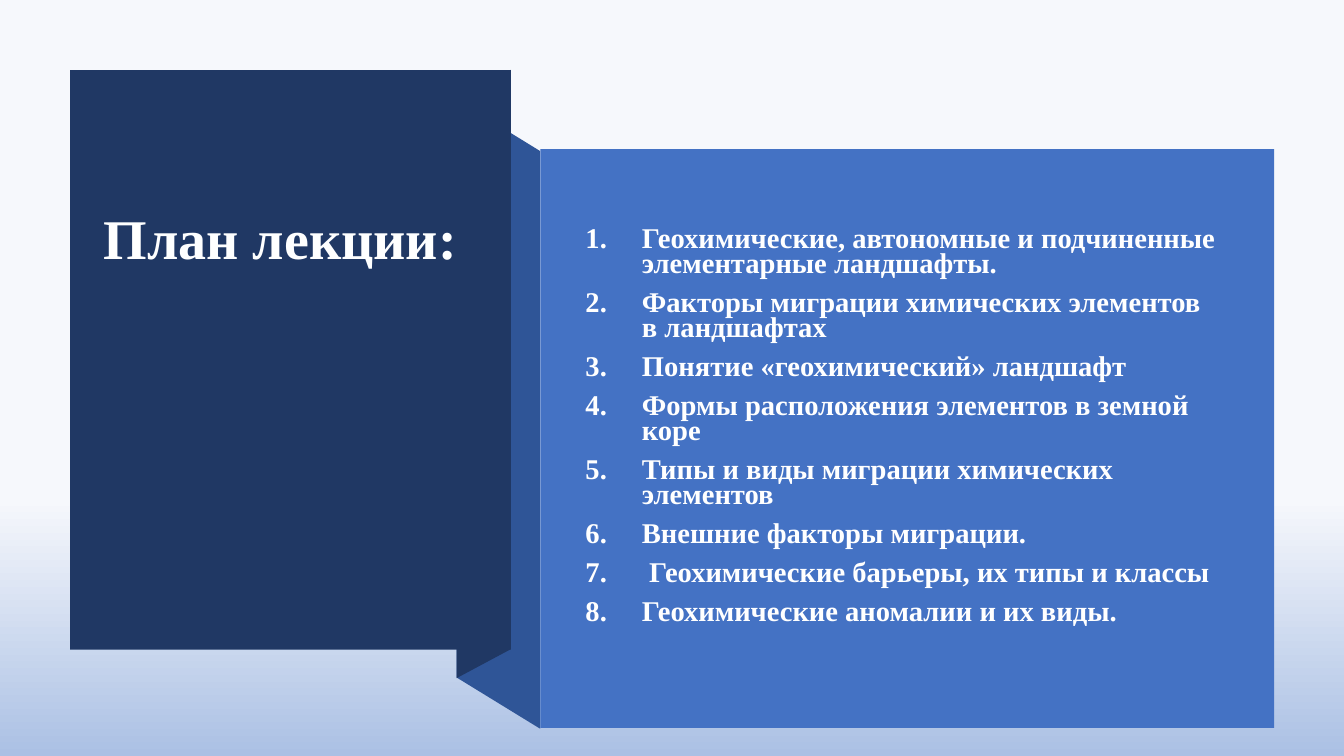
from pptx import Presentation
from pptx.dml.color import RGBColor
from pptx.enum.shapes import MSO_SHAPE
from pptx.enum.text import MSO_ANCHOR, MSO_AUTO_SIZE, PP_ALIGN
from pptx.oxml.xmlchemy import OxmlElement
from pptx.util import Pt

RECTANGLE = MSO_SHAPE.RECTANGLE
TOP = MSO_ANCHOR.TOP
NO_AUTOFIT = MSO_AUTO_SIZE.NONE
LEFT = PP_ALIGN.LEFT

TITLE_ONLY = 5
FONT = "Times New Roman"
COLORS = {
    "sky": "F6F8FC",
    "horizon": "ABC0E4",
    "cover": "203864",
    "fold": "2F5597",
    "panel": "4472C4",
    "title": "FEFFFF",
    "text": "FFFFFF",
}
PLAN = [
    "Геохимические, автономные и подчиненные элементарные ландшафты.",
    "Факторы миграции химических элементов в ландшафтах",
    "Понятие «геохимический» ландшафт",
    "Формы расположения элементов в земной коре",
    "Типы и виды миграции химических элементов",
    "Внешние факторы миграции.",
    " Геохимические барьеры, их типы и классы",
    "Геохимические аномалии и их виды.",
]
FOLD_LEFT, COVER_RIGHT, PANEL_LEFT = 326.2, 364.6, 385.9


def color(name):
    return RGBColor.from_string(COLORS[name])


def paint_background(slide):
    fill = slide.background.fill
    fill.gradient()
    fill.gradient_angle = 270
    for stop, name, position in zip(fill.gradient_stops, ("sky", "horizon"), (0.66, 1)):
        stop.color.rgb = color(name)
        stop.position = position


def paint(shape, name):
    shape.fill.solid()
    shape.fill.fore_color.rgb = color(name)
    shape.line.fill.background()
    shape.shadow.inherit = False


def add_block(slide, left, top, width, height, name):
    block = slide.shapes.add_shape(RECTANGLE, Pt(left), Pt(top), Pt(width), Pt(height))
    paint(block, name)


def add_ribbon(slide, corners, name):
    start, *rest = [(Pt(x), Pt(y)) for x, y in corners]
    outline = slide.shapes.build_freeform(*start)
    outline.add_line_segments(rest, close=True)
    paint(outline.convert_to_shape(), name)


def number_paragraph(paragraph, indent):
    properties = paragraph._p.get_or_add_pPr()
    properties.set("marL", str(Pt(indent)))
    properties.set("indent", str(-Pt(indent)))
    numbering = OxmlElement("a:buAutoNum")
    numbering.set("type", "arabicPeriod")
    properties.append(numbering)


def write_text(shape, lines, size, name, spacing=1.0, gap=0, indent=None):
    frame = shape.text_frame
    frame.word_wrap = True
    frame.auto_size = NO_AUTOFIT
    frame.vertical_anchor = TOP
    frame.text = "\n".join(lines)
    for paragraph in frame.paragraphs:
        paragraph.alignment = LEFT
        paragraph.line_spacing = spacing
        paragraph.space_before = Pt(0)
        paragraph.space_after = Pt(gap)
        if indent:
            number_paragraph(paragraph, indent)
        font = paragraph.runs[0].font
        font.name = FONT
        font.size = Pt(size)
        font.bold = True
        font.color.rgb = color(name)


def add_title(slide, text):
    title = slide.shapes.title
    title.left, title.top, title.width, title.height = Pt(67), Pt(141.8), Pt(308.9), Pt(55.4)
    write_text(title, [text], size=40, name="title")
    slide.shapes._spTree.append(title._element)


def add_plan(slide, items):
    plan = slide.shapes.add_textbox(Pt(411.1), Pt(159.5), Pt(468.7), Pt(288.3))
    write_text(plan, items, size=20.4, name="text", spacing=0.73, gap=10, indent=40.3)


def main():
    deck = Presentation()
    deck.slide_width, deck.slide_height = Pt(960), Pt(540)
    slide = deck.slides.add_slide(deck.slide_layouts[TITLE_ONLY])
    paint_background(slide)
    add_ribbon(
        slide,
        [(PANEL_LEFT, 520.6), (FOLD_LEFT, 484), (FOLD_LEFT, 71.3), (PANEL_LEFT, 108)],
        "fold",
    )
    add_ribbon(
        slide,
        [(COVER_RIGHT, 463.9), (FOLD_LEFT, 484.4), (FOLD_LEFT, 70.6), (COVER_RIGHT, 49.9)],
        "cover",
    )
    add_block(slide, 50, 50.1, 315, 414, "cover")
    add_block(slide, PANEL_LEFT, 106.6, 524.2, 413.4, "panel")
    add_plan(slide, PLAN)
    add_title(slide, "План лекции:")
    deck.save("out.pptx")


if __name__ == "__main__":
    main()
